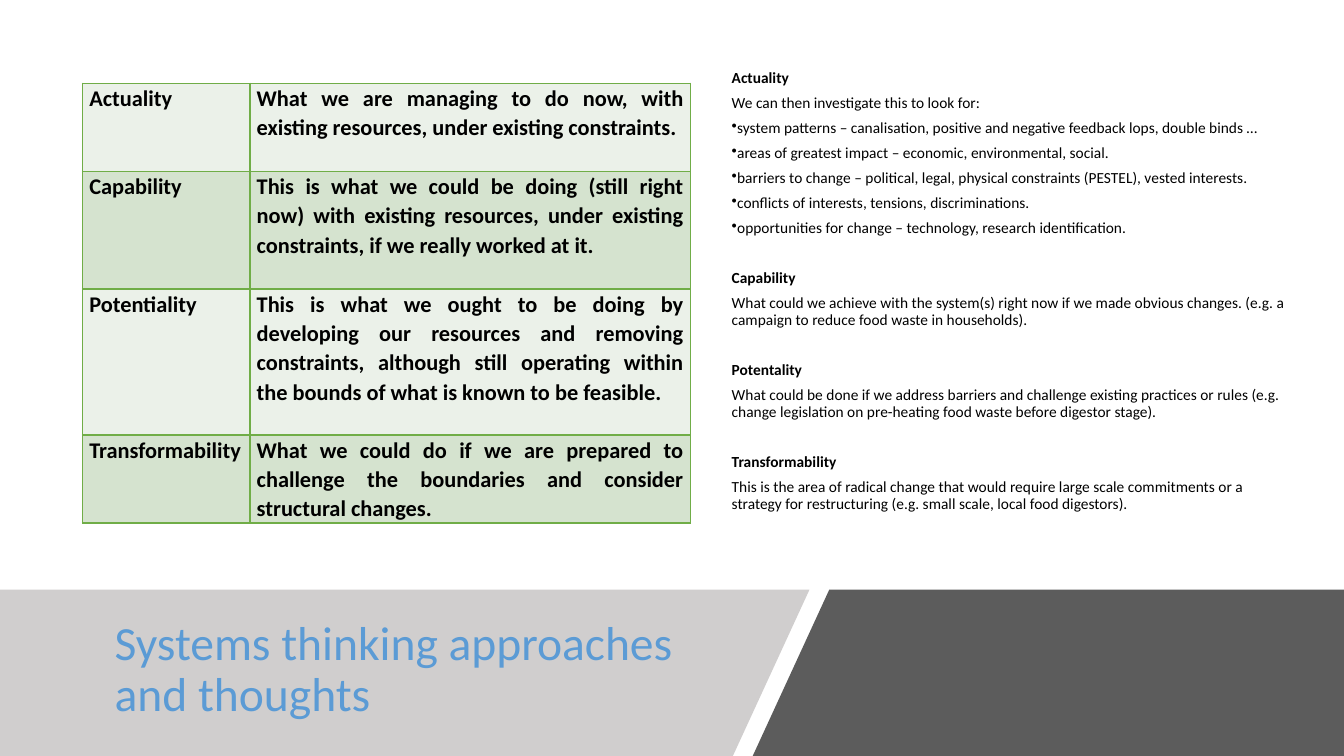
from lxml.etree import SubElement
from pptx import Presentation
from pptx.dml.color import RGBColor
from pptx.enum.text import MSO_ANCHOR as Anchor, PP_ALIGN as Align
from pptx.oxml.ns import qn
from pptx.util import Cm, Pt

FONT = "Calibri"
BLACK = "000000"
GREEN = "70AD47"
BAND_TOP, SLIDE_WIDTH, SLIDE_HEIGHT = 14.86, 33.87, 19.05

LEVELS = [
    ("Actuality", "What we are managing to do now, with existing resources, "
     "under existing constraints.", 2.22),
    ("Capability", "This is what we could be doing (still right now) with existing "
     "resources, under existing constraints, if we really worked at it.", 2.96),
    ("Potentiality", "This is what we ought to be doing by developing our resources and "
     "removing constraints, although still operating within the bounds of what is "
     "known to be feasible.", 3.68),
    ("Transformability", "What we could do if we are prepared to challenge the "
     "boundaries and consider structural changes.", 2.22),
]

NOTES = [
    ("Actuality", "We can then investigate this to look for:", [
        "system patterns – canalisation, positive and negative feedback lops, double binds …",
        "areas of greatest impact – economic, environmental, social.",
        "barriers to change – political, legal, physical constraints (PESTEL), vested interests.",
        "conflicts of interests, tensions, discriminations.",
        "opportunities for change – technology, research identification.",
    ]),
    ("Capability", "What could we achieve with the system(s) right now if we made obvious "
     "changes. (e.g. a campaign to reduce food waste in households).", []),
    ("Potentality", "What could be done if we address barriers and challenge existing "
     "practices or rules (e.g. change legislation on pre-heating food waste before "
     "digestor stage).", []),
    ("Transformability", "This is the area of radical change that would require large scale "
     "commitments or a strategy for restructuring (e.g. small scale, local food "
     "digestors).", []),
]


def paint(color_owner, color):
    color_owner.rgb = RGBColor.from_string(color)


def write(paragraph, text, size, color=BLACK, bold=False, line=0.9, after=6, before=0):
    paragraph.text = text
    paragraph.line_spacing = line
    paragraph.space_before = Pt(before)
    paragraph.space_after = Pt(after)
    paragraph.font.name = FONT
    paragraph.font.size = Pt(size)
    paragraph.font.bold = bold
    paint(paragraph.font.color, color)


def add_bullet(paragraph):
    properties = paragraph._p.get_or_add_pPr()
    properties.set("marL", "0")
    properties.set("indent", str(-Cm(0.64)))
    bullet = SubElement(properties, qn("a:buChar"), char="•")
    properties.find(qn("a:defRPr")).addprevious(bullet)


def add_band(slide, corners, color, opacity=100):
    points = [(Cm(x), Cm(y)) for x, y in corners]
    builder = slide.shapes.build_freeform(*points[0])
    builder.add_line_segments(points[1:])
    band = builder.convert_to_shape()
    band.shadow.inherit = False
    band.line.fill.background()
    band.fill.solid()
    paint(band.fill.fore_color, color)
    if opacity < 100:
        tint = band._element.spPr.find(qn("a:solidFill"))[0]
        SubElement(tint, qn("a:alpha"), val=str(opacity * 1000))


def add_text_frame(slide, left, top, width, height):
    frame = slide.shapes.add_textbox(Cm(left), Cm(top), Cm(width), Cm(height)).text_frame
    frame.word_wrap = True
    frame.vertical_anchor = Anchor.MIDDLE
    return frame


def add_notes(slide):
    frame = add_text_frame(slide, 18.19, 1.57, 14.45, 12.14)
    frame.margin_bottom = Cm(0.72)
    paragraph = frame.paragraphs[0]
    for index, (heading, statement, points) in enumerate(NOTES):
        if index:
            paragraph = frame.add_paragraph()
        write(paragraph, heading, 11, bold=True, before=18 if index else 0)
        write(frame.add_paragraph(), statement, 11)
        for point in points:
            paragraph = frame.add_paragraph()
            write(paragraph, point, 11)
            add_bullet(paragraph)


def add_borders(cell):
    properties = cell._tc.get_or_add_tcPr()
    for side in ("lnL", "lnR", "lnT", "lnB"):
        border = SubElement(properties, qn(f"a:{side}"), w=str(Pt(1)))
        fill = SubElement(border, qn("a:solidFill"))
        SubElement(fill, qn("a:srgbClr"), val=GREEN)


def fill_cell(cell, text, color):
    cell.margin_left = cell.margin_right = Cm(0.17)
    cell.margin_top = cell.margin_bottom = 0
    add_borders(cell)
    cell.fill.solid()
    paint(cell.fill.fore_color, color)
    paragraph = cell.text_frame.paragraphs[0]
    write(paragraph, text, 16, bold=True, line=1.07, after=8)
    paragraph.alignment = Align.JUSTIFY


def add_level_table(slide):
    widths = (4.22, 11.1)
    total_height = sum(height for _, _, height in LEVELS)
    table = slide.shapes.add_table(len(LEVELS), len(widths), Cm(2.08), Cm(2.1),
                                   Cm(sum(widths)), Cm(total_height)).table
    table.first_row = table.horz_banding = False
    for column, width in zip(table.columns, widths):
        column.width = Cm(width)
    for index, (level, meaning, height) in enumerate(LEVELS):
        table.rows[index].height = Cm(height)
        color = "D5E3CF" if index % 2 else "EBF1E9"
        fill_cell(table.cell(index, 0), level, color)
        fill_cell(table.cell(index, 1), meaning, color)


def main():
    deck = Presentation()
    deck.slide_width, deck.slide_height = Cm(SLIDE_WIDTH), Cm(SLIDE_HEIGHT)
    slide = deck.slides.add_slide(deck.slide_layouts[6])
    add_band(slide, [(20.9, BAND_TOP), (SLIDE_WIDTH, BAND_TOP),
                     (SLIDE_WIDTH, SLIDE_HEIGHT), (18.97, SLIDE_HEIGHT)], "404040", 85)
    add_band(slide, [(0, BAND_TOP), (20.4, BAND_TOP),
                     (18.47, SLIDE_HEIGHT), (0, SLIDE_HEIGHT)], "D0CECE")
    title = add_text_frame(slide, 2.64, 15.37, 15.82, 3.05)
    write(title.paragraphs[0], "Systems thinking approaches and thoughts", 34, "5B9BD5")
    add_notes(slide)
    add_level_table(slide)
    deck.save("out.pptx")


if __name__ == "__main__":
    main()
